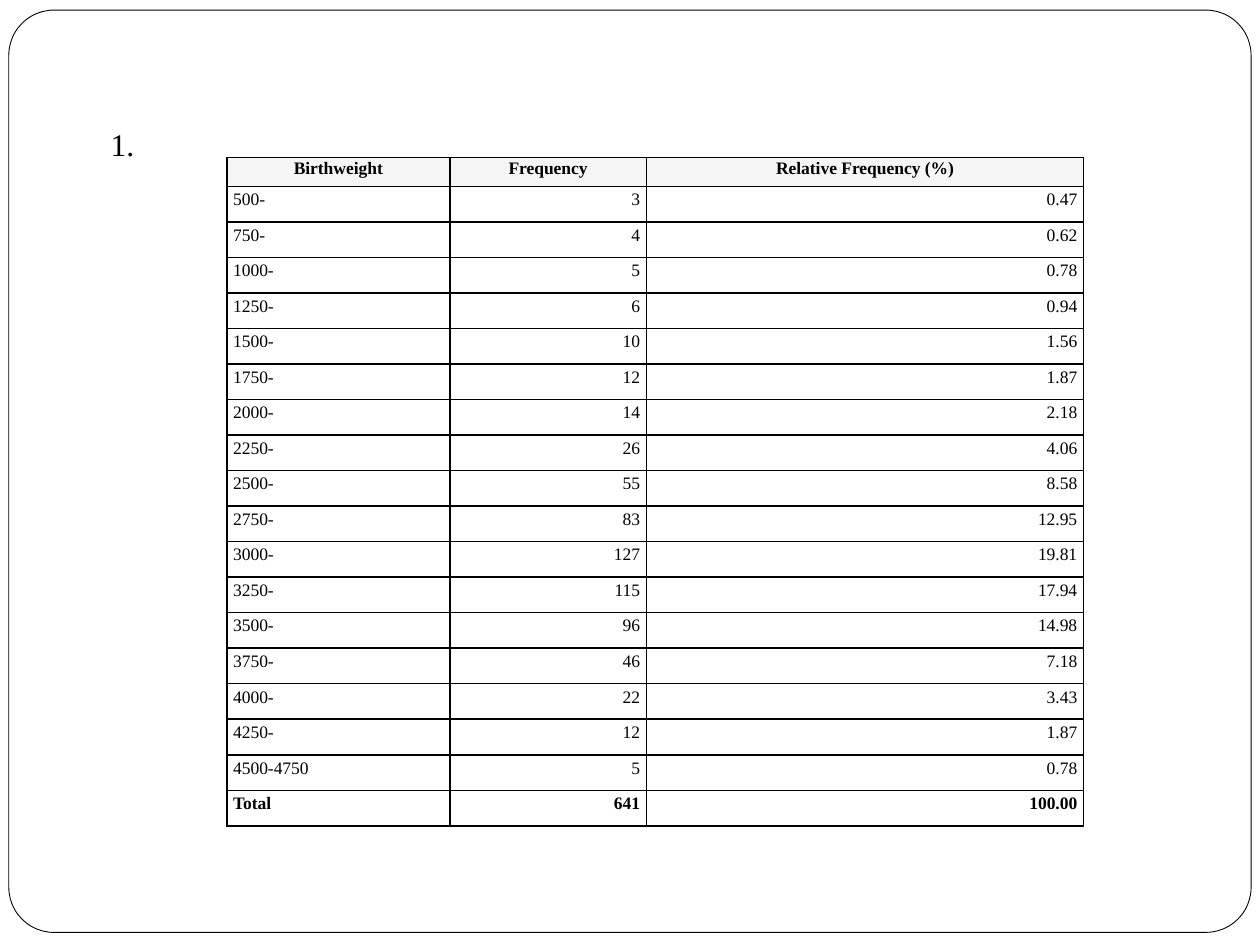
from pptx import Presentation
from pptx.dml.color import RGBColor
from pptx.enum.shapes import MSO_SHAPE
from pptx.enum.text import PP_ALIGN
from pptx.oxml import parse_xml
from pptx.oxml.ns import nsdecls
from pptx.util import Inches, Pt

BLACK = RGBColor(0x00, 0x00, 0x00)
WHITE = RGBColor(0xFF, 0xFF, 0xFF)
HEADER_GRAY = RGBColor(0xF5, 0xF5, 0xF5)
FONT = "Times New Roman"

PAGE_WIDTH, PAGE_HEIGHT = Inches(10), Inches(7.5)
COLUMN_WIDTHS = [1.77, 1.56, 3.47]
HEADER_HEIGHT = 0.23
HEADINGS = ["Birthweight", "Frequency", "Relative Frequency (%)"]
CLASS_LABELS = [f"{start}-" for start in range(500, 4500, 250)] + ["4500-4750"]
FREQUENCIES = [3, 4, 5, 6, 10, 12, 14, 26, 55, 83, 127, 115, 96, 46, 22, 12, 5]


def frequency_rows():
    total = sum(FREQUENCIES)
    entries = [*zip(CLASS_LABELS, FREQUENCIES), ("Total", total)]
    return [(label, str(count), f"{100 * count / total:.2f}")
            for label, count in entries]


def add_text(para, text, size, bold=False):
    span = para.add_run()
    span.text = text
    span.font.name = FONT
    span.font.size = Pt(size)
    span.font.bold = bold
    span.font.color.rgb = BLACK


def add_frame(page, left, top, width, height):
    frame = page.shapes.add_shape(
        MSO_SHAPE.ROUNDED_RECTANGLE, left, top, width, height)
    frame.adjustments[0] = 0.049
    frame.shadow.inherit = False
    frame.fill.solid()
    frame.fill.fore_color.rgb = WHITE
    frame.line.color.rgb = BLACK
    frame.line.width = Pt(0.5)


def add_item_number(page, left, top, width, height):
    box = page.shapes.add_textbox(left, top, width, height)
    box.text_frame.word_wrap = True
    add_text(box.text_frame.paragraphs[0], "1.", 18)


def add_borders(cell):
    """Draw the four cell edges; they must precede the fill in the XML."""
    properties = cell._tc.get_or_add_tcPr()
    for position, edge in enumerate(("lnL", "lnR", "lnT", "lnB")):
        properties.insert(position, parse_xml(
            f'<a:{edge} {nsdecls("a")} w="{Pt(1)}"><a:solidFill>'
            f'<a:srgbClr val="{BLACK}"/></a:solidFill></a:{edge}>'))


def fill_cell(cell, text, alignment, fill, inset, bold):
    side, edge = inset
    cell.margin_left = cell.margin_right = Inches(side)
    cell.margin_top = cell.margin_bottom = Inches(edge)
    cell.fill.solid()
    cell.fill.fore_color.rgb = fill
    para = cell.text_frame.paragraphs[0]
    para.alignment = alignment
    add_text(para, text, 10, bold)
    add_borders(cell)


def add_frequency_table(page, left, top, width, height):
    rows = [HEADINGS, *frequency_rows()]
    table = page.shapes.add_table(
        len(rows), len(HEADINGS), left, top, width, height).table
    for column, share in zip(table.columns, COLUMN_WIDTHS):
        column.width = int(width * share / sum(COLUMN_WIDTHS))
    header_height = Inches(HEADER_HEIGHT)
    body_height = (height - header_height) // (len(rows) - 1)
    for row_index, values in enumerate(rows):
        is_header = row_index == 0
        is_total = row_index == len(rows) - 1
        table.rows[row_index].height = header_height if is_header else body_height
        for column_index, text in enumerate(values):
            if is_header:
                alignment = PP_ALIGN.CENTER
            else:
                alignment = PP_ALIGN.RIGHT if column_index else PP_ALIGN.LEFT
            fill_cell(table.cell(row_index, column_index), text, alignment,
                      HEADER_GRAY if is_header else WHITE,
                      (0.01, 0.01) if is_header else (0.05, 0.03),
                      is_header or is_total)


def main():
    deck = Presentation()
    deck.slide_width, deck.slide_height = PAGE_WIDTH, PAGE_HEIGHT
    page = deck.slides.add_slide(deck.slide_layouts.get_by_name("Blank"))
    add_frame(page, Inches(0.07), Inches(0.08), Inches(9.86), Inches(7.32))
    add_item_number(page, Inches(0.78), Inches(0.94), Inches(4.84), Inches(0.4))
    add_frequency_table(page, Inches(1.8), Inches(1.25), Inches(6.8), Inches(5.31))
    deck.save("out.pptx")


if __name__ == "__main__":
    main()
